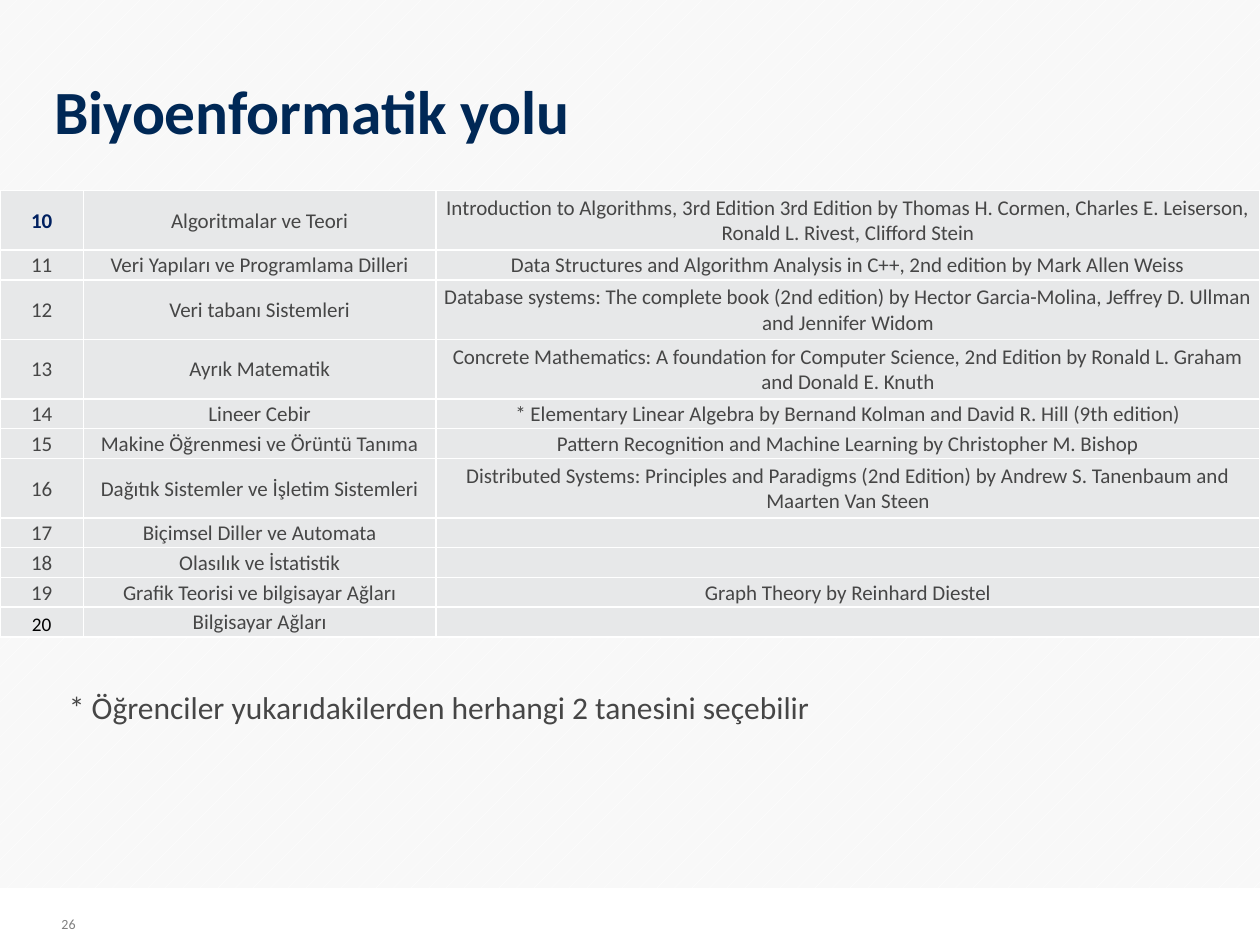
"""Build the bioinformatics track slide with its table of courses and textbooks."""
import pptx
import pptx.dml.color
import pptx.enum.dml
import pptx.enum.shapes
import pptx.enum.text
import pptx.oxml.ns
import pptx.util
from lxml import etree

Cm, Pt = pptx.util.Cm, pptx.util.Pt
ANCHOR, ALIGN = pptx.enum.text.MSO_ANCHOR, pptx.enum.text.PP_ALIGN
qn = pptx.oxml.ns.qn

TITLE = "Biyoenformatik yolu"
NOTE = "* Öğrenciler yukarıdakilerden herhangi 2 tanesini seçebilir"
PAGE = "26"
COURSES = [
    ("10", "Algoritmalar ve Teori",
     "Introduction to Algorithms, 3rd Edition 3rd Edition by Thomas H. Cormen, "
     "Charles E. Leiserson, Ronald L. Rivest, Clifford Stein"),
    ("11", "Veri Yapıları ve Programlama Dilleri",
     "Data Structures and Algorithm Analysis in C++, 2nd edition by Mark Allen Weiss"),
    ("12", "Veri tabanı Sistemleri",
     "Database systems: The complete book (2nd edition) by Hector Garcia-Molina, "
     "Jeffrey D. Ullman and Jennifer Widom"),
    ("13", "Ayrık Matematik",
     "Concrete Mathematics: A foundation for Computer Science, 2nd Edition "
     "by Ronald L. Graham and Donald E. Knuth"),
    ("14", "Lineer Cebir",
     "* Elementary Linear Algebra by Bernand Kolman and David R. Hill (9th edition)"),
    ("15", "Makine Öğrenmesi ve Örüntü Tanıma",
     "Pattern Recognition and Machine Learning by Christopher M. Bishop"),
    ("16", "Dağıtık Sistemler ve İşletim Sistemleri",
     "Distributed Systems: Principles and Paradigms (2nd Edition) "
     "by Andrew S. Tanenbaum and Maarten Van Steen"),
    ("17", "Biçimsel Diller ve Automata", ""),
    ("18", "Olasılık ve İstatistik", ""),
    ("19", "Grafik Teorisi ve bilgisayar Ağları", "Graph Theory by Reinhard Diestel"),
    ("20", "Bilgisayar Ağları", ""),
]
COLORS = {"white": "FFFFFF", "back": "F8F8F8", "title": "002856", "text": "464646",
          "page": "808080", "cell": "E7E8E9", "first": "002060", "last": "000000"}
SPECIAL = {
    (0, 0): {"color": "first", "bold": True},
    (len(COURSES) - 1, 0): {"color": "last", "size": 11, "anchor": ANCHOR.BOTTOM},
}
COLUMN_WIDTHS = (1.68, 7.11, 16.61)
LINE_HEIGHT = 0.6
LINE_LENGTH = 90


def rgb(name):
    return pptx.dml.color.RGBColor.from_string(COLORS[name])


def write(frame, text, size=12, color="text", bold=False, align=ALIGN.LEFT,
          anchor=ANCHOR.TOP, spacing=None):
    frame.vertical_anchor = anchor
    frame.word_wrap = True
    paragraph = frame.paragraphs[0]
    paragraph.alignment = align
    paragraph.line_spacing = spacing
    if text:
        run = paragraph.add_run()
        run.text = text
        run.font.name, run.font.size, run.font.bold = "Calibri", Pt(size), bold
        run.font.color.rgb = rgb(color)
    else:
        etree.SubElement(paragraph._p, qn("a:endParaRPr"), sz=str(size * 100))


def place(shape, left, top, width, height):
    shape.left, shape.top = Cm(left), Cm(top)
    shape.width, shape.height = Cm(width), Cm(height)


def add_label(slide, text, box, **style):
    write(slide.shapes.add_textbox(*map(Cm, box)).text_frame, text, **style)


def style_cell(cell):
    cell.margin_left = cell.margin_right = cell.margin_top = Cm(0.03)
    cell.margin_bottom = 0
    properties = cell._tc.get_or_add_tcPr()
    for side in ("lnL", "lnR", "lnT", "lnB"):
        line = etree.SubElement(properties, qn(f"a:{side}"), w=str(Pt(1)))
        fill = etree.SubElement(line, qn("a:solidFill"))
        etree.SubElement(fill, qn("a:srgbClr"), val=COLORS["white"])
    cell.fill.solid()
    cell.fill.fore_color.rgb = rgb("cell")


def add_courses(slide):
    heights = [LINE_HEIGHT * (2 if len(book) > LINE_LENGTH else 1) for *_, book in COURSES]
    table = slide.shapes.add_table(len(COURSES), len(COLUMN_WIDTHS), Cm(0), Cm(3.84),
                                   Cm(sum(COLUMN_WIDTHS)), Cm(sum(heights))).table
    table.first_row = table.horz_banding = False
    for column, width in zip(table.columns, COLUMN_WIDTHS):
        column.width = Cm(width)
    for row_index, (course, height) in enumerate(zip(COURSES, heights)):
        table.rows[row_index].height = Cm(height)
        for column_index, text in enumerate(course):
            cell = table.cell(row_index, column_index)
            style_cell(cell)
            style = {"anchor": ANCHOR.MIDDLE, **SPECIAL.get((row_index, column_index), {})}
            cell.vertical_anchor = style.pop("anchor")
            write_cell = cell.text_frame
            write(write_cell, text, align=ALIGN.CENTER, anchor=None, **style)


def main():
    presentation = pptx.Presentation()
    presentation.slide_width, presentation.slide_height = Cm(25.4), Cm(19.05)
    slide = presentation.slides.add_slide(presentation.slide_layouts[5])

    background = slide.background.fill
    background.patterned()
    background.pattern = pptx.enum.dml.MSO_PATTERN.PERCENT_5
    background.fore_color.rgb, background.back_color.rgb = rgb("white"), rgb("back")

    footer = slide.shapes.add_shape(pptx.enum.shapes.MSO_SHAPE.RECTANGLE,
                                    Cm(0), Cm(17.9), Cm(25.4), Cm(1.15))
    footer.shadow.inherit = False
    footer.fill.solid()
    footer.fill.fore_color.rgb = rgb("white")
    footer.line.fill.background()

    add_label(slide, PAGE, (0.99, 18.03, 0.91, 0.89), size=8, color="page",
              anchor=ANCHOR.BOTTOM)
    title = slide.shapes.title
    place(title, 0.84, 1.63, 13.33, 1.52)
    write(title.text_frame, TITLE, size=35.1, color="title", bold=True, spacing=0.8)
    title.text_frame.auto_size = pptx.enum.text.MSO_AUTO_SIZE.NONE
    add_courses(slide)
    add_label(slide, NOTE, (1.14, 13.74, 15.54, 1.02), size=18)
    presentation.save("out.pptx")


if __name__ == "__main__":
    main()
